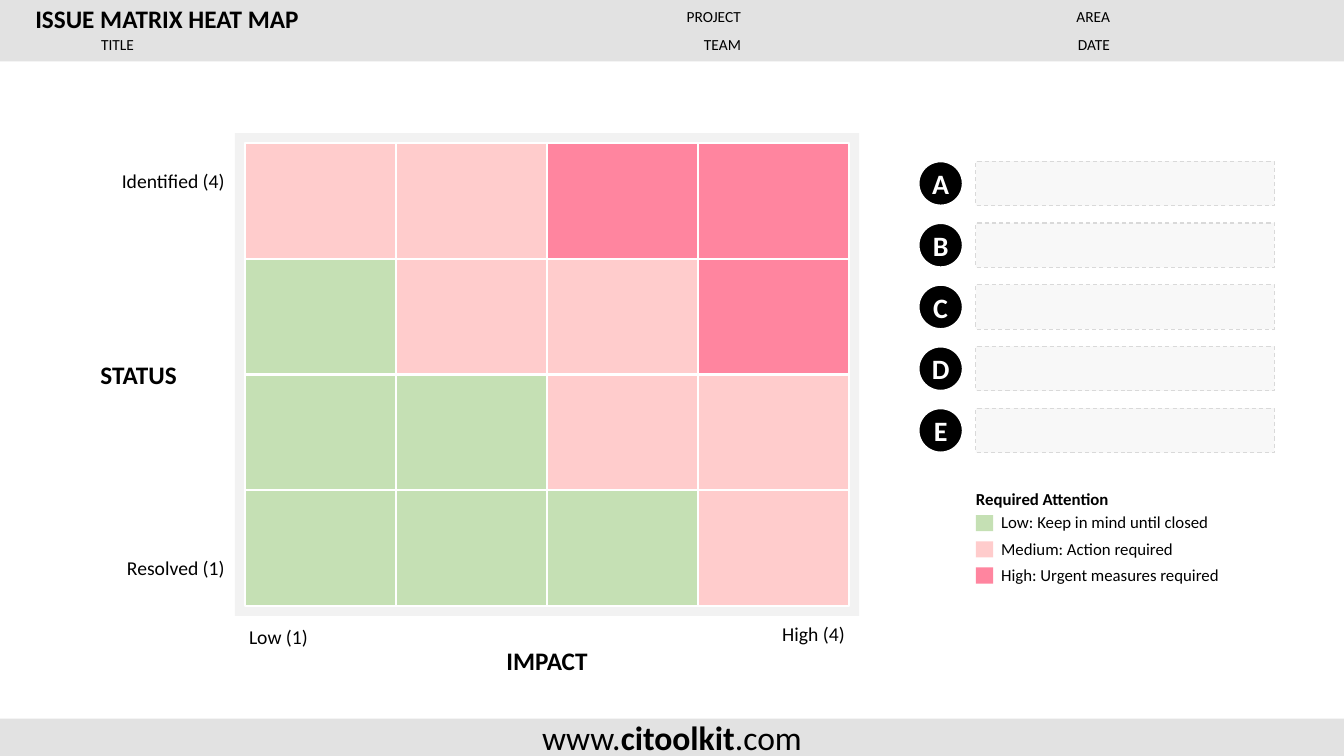
import dataclasses

import lxml.etree
import pptx
import pptx.dml.color
import pptx.enum.dml
import pptx.enum.shapes
import pptx.enum.text
import pptx.oxml.ns
import pptx.util

Inches = pptx.util.Inches
Pt = pptx.util.Pt
SHAPE = pptx.enum.shapes.MSO_SHAPE
ALIGN = pptx.enum.text.PP_ALIGN

TITLE = "ISSUE MATRIX HEAT MAP"
HEADER_FIELDS = [  # label, left, top, width
    ("TITLE", 0.15, 0.33, 1.22),
    ("PROJECT", 6.25, 0.05, 1.14),
    ("TEAM", 6.25, 0.33, 1.14),
    ("AREA", 10.24, 0.05, 0.81),
    ("DATE", 10.24, 0.33, 0.81),
]
ADDRESS = [("www.", False), ("citoolkit", True), (".com", False)]
HEAT_ROWS = ["MMHH", "LMMH", "LLMM", "LLLM"]
SCALE_ENDS = [  # label, box, alignment
    ("Identified (4)", (1.0, 1.65, 1.27, 0.29), ALIGN.RIGHT),
    ("Resolved (1)", (1.0, 5.49, 1.27, 0.29), ALIGN.RIGHT),
    ("Low (1)", (2.43, 6.17, 0.67, 0.29), ALIGN.LEFT),
    ("High (4)", (7.71, 6.14, 0.71, 0.29), ALIGN.RIGHT),
]
AXES = [
    ("STATUS", (0.7, 3.54, 1.35, 0.35)),
    ("IMPACT", (4.97, 6.38, 0.91, 0.35)),
]
ISSUES = "ABCDE"
LEGEND_TITLE = "Required Attention"
LEGEND = [
    ("L", "Low: Keep in mind until closed"),
    ("M", "Medium: Action required"),
    ("H", "High: Urgent measures required"),
]

SLIDE_W, SLIDE_H = 13.33, 7.5
GRID_LEFT, GRID_TOP, GRID_W, GRID_H = 2.43, 1.42, 5.99, 4.59
FRAME_MARGIN = 0.1
ISSUE_TOP, ISSUE_PITCH, ISSUE_SIZE = 1.6, 0.6125, 0.44
SIDE_LEFT = 9.68
LEGEND_TOP, LEGEND_PITCH = 5.11, 0.26


@dataclasses.dataclass(frozen=True)
class Theme:
    font: str = "Calibri"
    ink: str = "000000"
    paper: str = "FFFFFF"
    band: str = "E2E2E2"
    panel: str = "F2F2F2"
    dash: str = "D9D9D9"
    low: str = "C5E0B4"
    medium: str = "FFCCCC"
    high: str = "FF859F"
    field_size: int = 11
    legend_size: int = 12
    scale_size: int = 14
    heading_size: int = 18
    letter_size: int = 20
    address_size: int = 24


THEME = Theme()
LEVEL_COLOURS = {"L": THEME.low, "M": THEME.medium, "H": THEME.high}


def rgb(colour):
    return pptx.dml.color.RGBColor.from_string(colour)


def place(shape, box):
    shape.left, shape.top, shape.width, shape.height = map(Inches, box)


def add_block(slide, box, fill, line=None, line_width=1.5, kind=SHAPE.RECTANGLE):
    block = slide.shapes.add_shape(kind, *map(Inches, box))
    block.shadow.inherit = False
    block.fill.solid()
    block.fill.fore_color.rgb = rgb(fill)
    if line:
        block.line.color.rgb = rgb(line)
        block.line.width = Pt(line_width)
    else:
        block.line.fill.background()
    return block


def format_frame(shape, inset=0.04, wrap=True):
    frame = shape.text_frame
    frame.auto_size = pptx.enum.text.MSO_AUTO_SIZE.NONE
    frame.word_wrap = wrap
    frame.vertical_anchor = pptx.enum.text.MSO_ANCHOR.MIDDLE
    frame.margin_left = frame.margin_right = Inches(inset)
    frame.margin_top = frame.margin_bottom = Inches(inset)


def format_run(run, size, bold=False, colour=THEME.ink):
    run.font.name = THEME.font
    run.font.size = Pt(size)
    run.font.bold = bold
    run.font.color.rgb = rgb(colour)


def write(shape, text, size, align=ALIGN.LEFT, bold=False, colour=THEME.ink, inset=0.04, wrap=True):
    format_frame(shape, inset, wrap)
    shape.text_frame.text = text
    for paragraph in shape.text_frame.paragraphs:
        paragraph.alignment = align
        for run in paragraph.runs:
            format_run(run, size, bold, colour)


def add_label(slide, box, text, size, **options):
    label = slide.shapes.add_textbox(*map(Inches, box))
    write(label, text, size, **options)
    return label


def set_alpha(shape, percent):
    colour = shape.fill.fore_color
    colour_element = shape.element.spPr.find(".//" + pptx.oxml.ns.qn("a:srgbClr"))
    alpha = lxml.etree.SubElement(colour_element, pptx.oxml.ns.qn("a:alpha"))
    alpha.set("val", str(percent * 1000))
    return colour


def add_bands(slide):
    footer = add_block(slide, (0, 7.13, SLIDE_W, 0.37), THEME.band)
    format_frame(footer)
    address = footer.text_frame.paragraphs[0]
    address.alignment = ALIGN.CENTER
    for text, bold in ADDRESS:
        run = address.add_run()
        run.text = text
        format_run(run, THEME.address_size, bold)

    header = add_block(slide, (0, 0, SLIDE_W, 0.61), THEME.band)
    title = slide.shapes.title
    header.element.addnext(title.element)
    place(title, (0.31, 0, 5.79, 0.37))
    write(title, TITLE, THEME.heading_size, bold=True)
    for text, left, top, width in HEADER_FIELDS:
        add_label(slide, (left, top, width, 0.23), text, THEME.field_size, align=ALIGN.RIGHT)


def add_heat_map(slide):
    frame = (GRID_LEFT - FRAME_MARGIN, GRID_TOP - FRAME_MARGIN,
             GRID_W + 2 * FRAME_MARGIN, GRID_H + 2 * FRAME_MARGIN)
    add_block(slide, frame, THEME.panel)
    cell_h = GRID_H / len(HEAT_ROWS)
    for row, levels in enumerate(HEAT_ROWS):
        cell_w = GRID_W / len(levels)
        for column, level in enumerate(levels):
            cell = (GRID_LEFT + column * cell_w, GRID_TOP + row * cell_h, cell_w, cell_h)
            add_block(slide, cell, LEVEL_COLOURS[level], THEME.paper)
    for text, box, align in SCALE_ENDS:
        add_label(slide, box, text, THEME.scale_size, align=align, wrap=False)
    for text, box in AXES:
        add_label(slide, box, text, THEME.heading_size, align=ALIGN.CENTER, bold=True, wrap=False)


def add_issues(slide):
    for index, letter in enumerate(ISSUES):
        top = ISSUE_TOP + index * ISSUE_PITCH
        badge = add_block(slide, (9.11, top, ISSUE_SIZE, ISSUE_SIZE),
                          THEME.ink, THEME.paper, kind=SHAPE.OVAL)
        write(badge, letter, THEME.letter_size, align=ALIGN.CENTER, bold=True,
              colour=THEME.paper, inset=0, wrap=False)
        entry = add_block(slide, (SIDE_LEFT, top, 2.96, ISSUE_SIZE), THEME.panel, THEME.dash, 0.75)
        entry.line.dash_style = pptx.enum.dml.MSO_LINE.DASH
        set_alpha(entry, 50)


def add_legend(slide):
    add_label(slide, (SIDE_LEFT, 4.85, 1.33, 0.2), LEGEND_TITLE, THEME.legend_size,
              bold=True, inset=0, wrap=False)
    for index, (level, _) in enumerate(LEGEND):
        add_block(slide, (SIDE_LEFT, LEGEND_TOP + index * LEGEND_PITCH, 0.17, 0.16),
                  LEVEL_COLOURS[level])
    meanings = add_label(slide, (9.93, 5.08, 2.37, 0.72), "\n".join(text for _, text in LEGEND),
                         THEME.legend_size, inset=0)
    for paragraph in meanings.text_frame.paragraphs:
        paragraph.space_after = Pt(4.3)


def main():
    deck = pptx.Presentation()
    deck.slide_width, deck.slide_height = Inches(SLIDE_W), Inches(SLIDE_H)
    slide = deck.slides.add_slide(deck.slide_layouts.get_by_name("Title Only"))
    add_bands(slide)
    add_heat_map(slide)
    add_issues(slide)
    add_legend(slide)
    deck.save("out.pptx")


if __name__ == "__main__":
    main()
